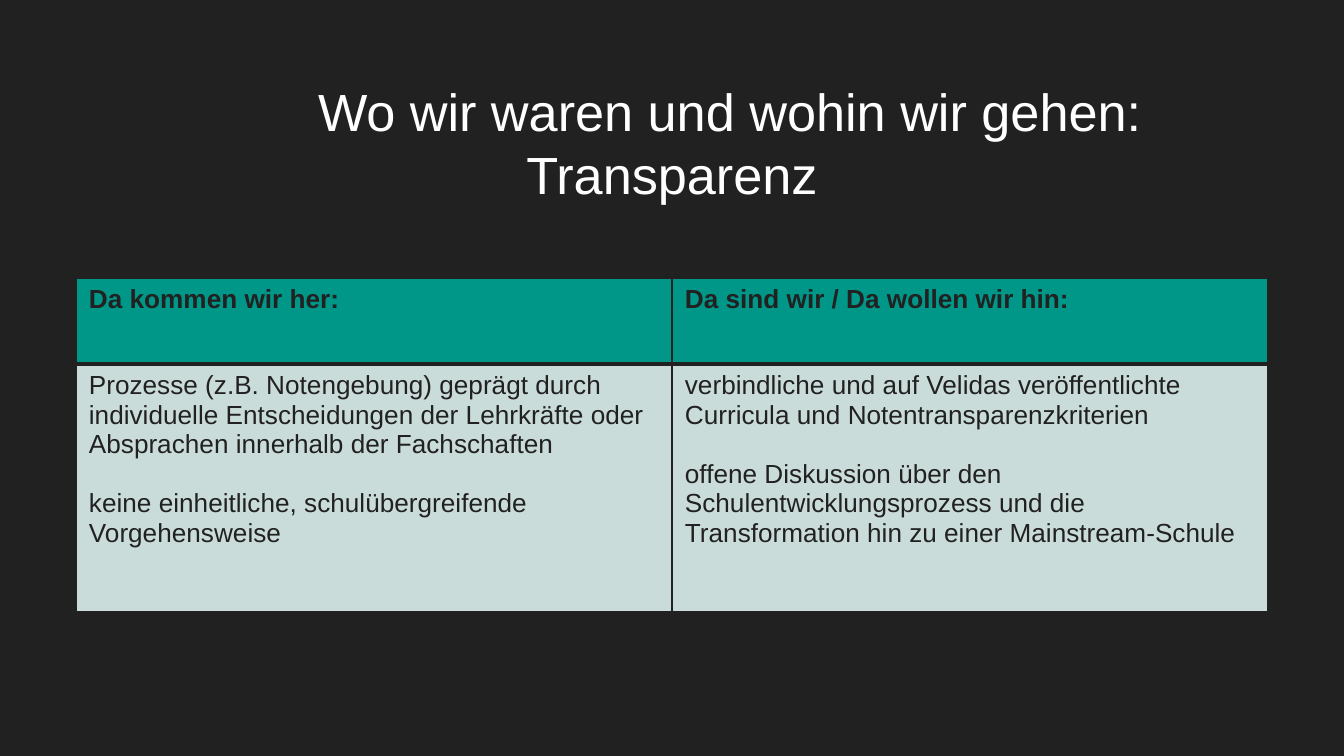
from dataclasses import dataclass

from lxml.etree import SubElement
from pptx import Presentation
from pptx.dml.color import RGBColor
from pptx.enum.text import MSO_ANCHOR as Anchor, PP_ALIGN as Align
from pptx.oxml.ns import qn
from pptx.util import Emu, Pt

EMU_PER_PX = 914400 / 134.4
DARK, WHITE, TEAL, PALE = "212121", "FFFFFF", "009688", "CADCD9"


@dataclass
class Row:
    height: int
    fill: str
    bold: bool
    bottom_line: int
    top_line: int
    cells: list[list[str]]


TITLE = ["Wo wir waren und wohin wir gehen:", "Transparenz"]
TITLE_INDENT = 115
COLUMN_WIDTH = 596
ROWS = [
    Row(86, TEAL, True, 3, 1, [
        ["Da kommen wir her:"],
        ["Da sind wir / Da wollen wir hin:"],
    ]),
    Row(248, PALE, False, 1, 3, [
        ["Prozesse (z.B. Notengebung) geprägt durch individuelle Entscheidungen "
         "der Lehrkräfte oder Absprachen innerhalb der Fachschaften",
         "keine einheitliche, schulübergreifende Vorgehensweise"],
        ["verbindliche und auf Velidas veröffentlichte Curricula und "
         "Notentransparenzkriterien",
         "offene Diskussion über den Schulentwicklungsprozess und die "
         "Transformation hin zu einer Mainstream-Schule"],
    ]),
]


def px(length: int) -> Emu:
    return Emu(round(length * EMU_PER_PX))


def color(code: str) -> RGBColor:
    return RGBColor.from_string(code)


def write(frame, texts: list[str], *, size: int, ink: str, bold: bool = False,
          align=Align.LEFT, gap: int = 0) -> None:
    """Write one paragraph per text, with a gap in points between them."""
    frame.word_wrap = True
    for index, text in enumerate(texts):
        para = frame.add_paragraph() if index else frame.paragraphs[0]
        para.alignment = align
        para.space_before = Pt(gap if index else 0)
        span = para.add_run()
        span.text = text
        span.font.name = "Arial"
        span.font.size = Pt(size)
        span.font.bold = bold
        span.font.color.rgb = color(ink)


def set_margins(holder, side: int, top: int, bottom: int) -> None:
    holder.margin_left = holder.margin_right = px(side)
    holder.margin_top, holder.margin_bottom = px(top), px(bottom)


def draw_borders(cell, row: Row) -> None:
    properties = cell._tc.get_or_add_tcPr()
    widths = {"L": 1, "R": 1, "T": row.top_line, "B": row.bottom_line}
    for position, (side, width) in enumerate(widths.items()):
        line = SubElement(properties, qn(f"a:ln{side}"), w=str(Pt(width)))
        fill = SubElement(line, qn("a:solidFill"))
        SubElement(fill, qn("a:srgbClr"), val=DARK)
        properties.insert(position, line)


def draw_title(page) -> None:
    box = page.shapes.add_textbox(px(46), px(66), px(1252), px(179))
    frame = box.text_frame
    set_margins(frame, side=13, top=13, bottom=13)
    frame.vertical_anchor = Anchor.TOP
    write(frame, TITLE, size=28, ink=WHITE, align=Align.CENTER)
    # The first line is centred to the right of an indent
    first = frame.paragraphs[0]._p.get_or_add_pPr()
    first.set("marL", str(px(TITLE_INDENT)))
    first.set("indent", "0")


def draw_table(page, rows: list[Row]) -> None:
    columns = len(rows[0].cells)
    height = sum(row.height for row in rows)
    table = page.shapes.add_table(len(rows), columns, px(76), px(278),
                                  px(columns * COLUMN_WIDTH), px(height)).table
    table.horz_banding = False
    for column in table.columns:
        column.width = px(COLUMN_WIDTH)
    for row_index, row in enumerate(rows):
        table.rows[row_index].height = px(row.height)
        for column_index, texts in enumerate(row.cells):
            cell = table.cell(row_index, column_index)
            cell.fill.solid()
            cell.fill.fore_color.rgb = color(row.fill)
            cell.vertical_anchor = Anchor.TOP
            set_margins(cell, side=13, top=7, bottom=7)
            write(cell.text_frame, texts, size=14, ink=DARK, bold=row.bold, gap=16)
            draw_borders(cell, row)


def main() -> None:
    deck = Presentation()
    deck.slide_width, deck.slide_height = px(1344), px(756)
    page = deck.slides.add_slide(deck.slide_layouts[6])

    # Background
    page.background.fill.solid()
    page.background.fill.fore_color.rgb = color(DARK)

    # Heading and comparison
    draw_title(page)
    draw_table(page, ROWS)
    deck.save("out.pptx")


if __name__ == "__main__":
    main()
